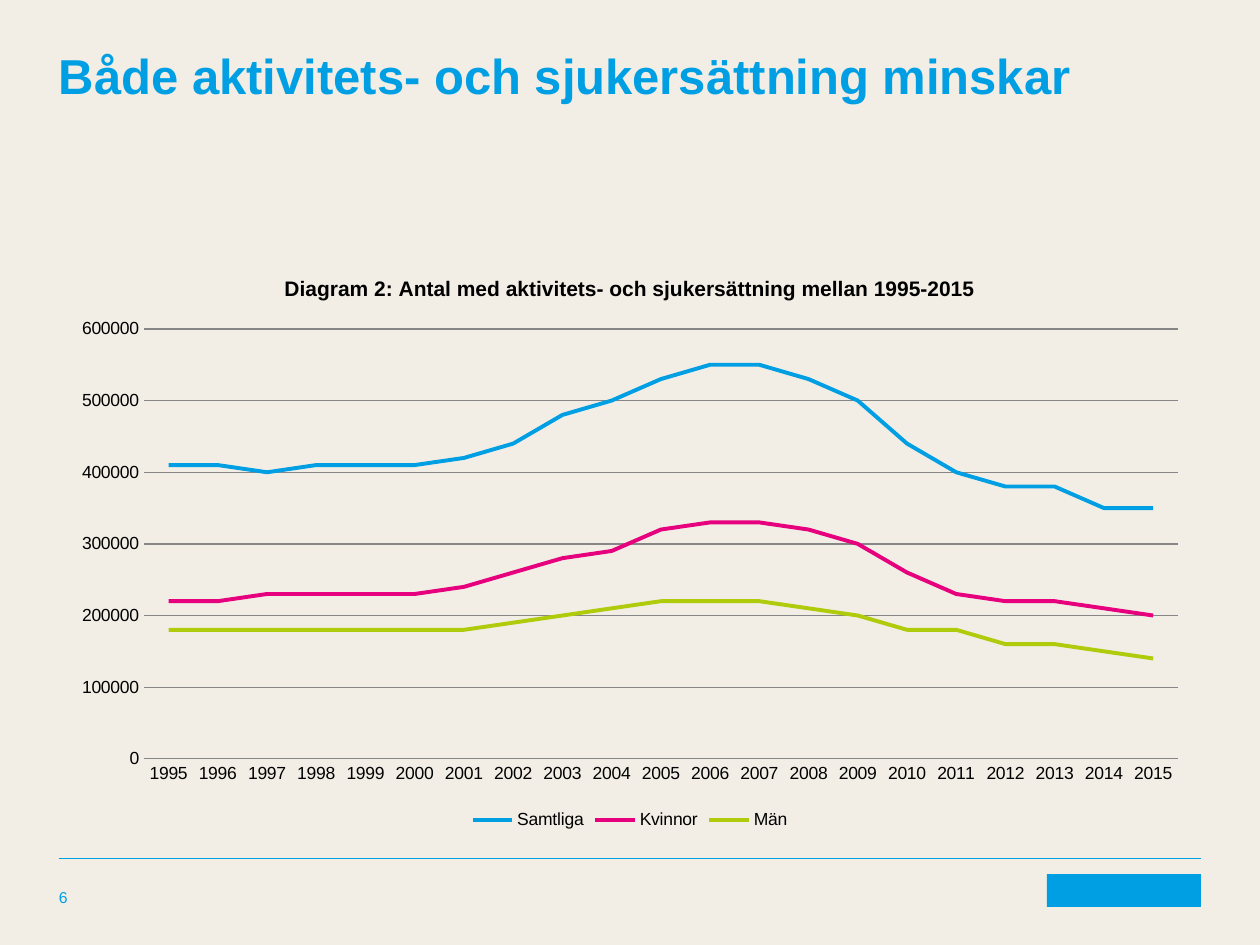
"""Build a slide with a line chart of people on activity and sickness benefit, 1995-2015."""
from typing import NamedTuple

from lxml import etree
from pptx import Presentation
from pptx import util as u
from pptx.chart.data import CategoryChartData
from pptx.dml.color import RGBColor
from pptx.enum import chart as ch, shapes, text
from pptx.oxml import ns

PX = 914400 / 126
FONT = "Arial"
BLUE, PINK, GREEN = "009FE4", "E6007E", "B0CB0B"
SAND, BLACK, GRAY = "F2EEE6", "000000", "868686"


class Box(NamedTuple):
    left: int
    top: int
    width: int
    height: int


class Label(NamedTuple):
    words: str
    box: Box
    size: int
    bold: bool
    anchor: text.MSO_ANCHOR


class Group(NamedTuple):
    name: str
    color: str
    ten_thousands: list[int]


LABELS = [
    Label("Både aktivitets- och sjukersättning minskar", Box(59, 45, 1142, 208), 28, True, text.MSO_ANCHOR.TOP),
    Label("6", Box(59, 874, 297, 33), 9, False, text.MSO_ANCHOR.BOTTOM),
]
GROUPS = [
    Group("Samtliga", BLUE, [41, 41, 40, 41, 41, 41, 42, 44, 48, 50, 53, 55, 55, 53, 50, 44, 40, 38, 38, 35, 35]),
    Group("Kvinnor", PINK, [22, 22, 23, 23, 23, 23, 24, 26, 28, 29, 32, 33, 33, 32, 30, 26, 23, 22, 22, 21, 20]),
    Group("Män", GREEN, [18, 18, 18, 18, 18, 18, 18, 19, 20, 21, 22, 22, 22, 21, 20, 18, 18, 16, 16, 15, 14]),
]
CHART_TITLE = "Diagram 2: Antal med aktivitets- och sjukersättning mellan 1995-2015"
CHART_BOX = Box(59, 254, 1142, 581)
PLOT_BOX = Box(144, 329, 1034, 430)
LOGO_BOX = Box(1047, 874, 154, 33)


def px(*lengths: int) -> list[u.Emu]:
    return [u.Emu(round(length * PX)) for length in lengths]


def rgb(color: str) -> RGBColor:
    return RGBColor.from_string(color)


def set_font(font, size: int, color: str, bold: bool = False) -> None:
    font.name, font.size, font.bold = FONT, u.Pt(size), bold
    font.color.rgb = rgb(color)


def set_line(line, color: str, width: float) -> None:
    line.color.rgb, line.width = rgb(color), u.Pt(width)


def add_label(slide, label: Label) -> None:
    frame = slide.shapes.add_textbox(*px(*label.box)).text_frame
    frame.word_wrap, frame.vertical_anchor = True, label.anchor
    frame.margin_left = frame.margin_right = frame.margin_top = frame.margin_bottom = 0
    paragraph = frame.paragraphs[0]
    paragraph.text = label.words
    set_font(paragraph.font, label.size, BLUE, label.bold)


def add_footer(slide) -> None:
    rule = slide.shapes.add_connector(shapes.MSO_CONNECTOR.STRAIGHT, *px(59, 858, 1201, 858))
    set_line(rule.line, BLUE, 0.5)
    etree.SubElement(rule._element.spPr, ns.qn("a:effectLst"))
    logo = slide.shapes.add_shape(shapes.MSO_SHAPE.RECTANGLE, *px(*LOGO_BOX))
    logo.shadow.inherit = False
    logo.fill.solid()
    logo.fill.fore_color.rgb = rgb(BLUE)
    logo.line.fill.background()


def place_plot(chart) -> None:
    area = chart._chartSpace.chart.plotArea
    for old in area.findall(ns.qn("c:layout")):
        area.remove(old)
    layout = etree.Element(ns.qn("c:layout"))
    manual = etree.SubElement(layout, ns.qn("c:manualLayout"))
    settings = {
        "layoutTarget": "inner", "xMode": "edge", "yMode": "edge",
        "x": round((PLOT_BOX.left - CHART_BOX.left) / CHART_BOX.width, 4),
        "y": round((PLOT_BOX.top - CHART_BOX.top) / CHART_BOX.height, 4),
        "w": round(PLOT_BOX.width / CHART_BOX.width, 4),
        "h": round(PLOT_BOX.height / CHART_BOX.height, 4),
    }
    for tag, value in settings.items():
        etree.SubElement(manual, ns.qn(f"c:{tag}"), val=str(value))
    area.insert(0, layout)


def add_benefit_chart(slide) -> None:
    data = CategoryChartData(number_format="0")
    data.categories = [str(year) for year in range(1995, 2016)]
    for group in GROUPS:
        data.add_series(group.name, [count * 10000 for count in group.ten_thousands])
    chart = slide.shapes.add_chart(ch.XL_CHART_TYPE.LINE, *px(*CHART_BOX), data).chart
    set_font(chart.font, 10, BLACK)

    heading = chart.chart_title.text_frame.paragraphs[0]
    heading.text = CHART_TITLE
    set_font(heading.font, 12, BLACK, True)
    chart.chart_title.include_in_layout = False
    chart.has_legend = True
    chart.legend.position = ch.XL_LEGEND_POSITION.BOTTOM
    chart.legend.include_in_layout = False

    years, counts = chart.category_axis, chart.value_axis
    for axis in (years, counts):
        axis.major_tick_mark = axis.minor_tick_mark = ch.XL_TICK_MARK.NONE
    set_line(years.format.line, GRAY, 0.75)
    counts.format.line.fill.background()
    counts.has_major_gridlines = True
    set_line(counts.major_gridlines.format.line, GRAY, 0.75)
    counts.minimum_scale, counts.maximum_scale, counts.major_unit = 0, 600000, 100000

    chart.plots[0].vary_by_categories = False
    for series, group in zip(chart.plots[0].series, GROUPS):
        series.smooth = False
        series.marker.style = ch.XL_MARKER_STYLE.NONE
        set_line(series.format.line, group.color, 2.25)
    place_plot(chart)


def main() -> None:
    deck = Presentation()
    deck.slide_width, deck.slide_height = px(1260, 945)
    slide = deck.slides.add_slide(deck.slide_layouts[6])
    slide.background.fill.solid()
    slide.background.fill.fore_color.rgb = rgb(SAND)
    add_footer(slide)
    for label in LABELS:
        add_label(slide, label)
    add_benefit_chart(slide)
    deck.save("out.pptx")


if __name__ == "__main__":
    main()
